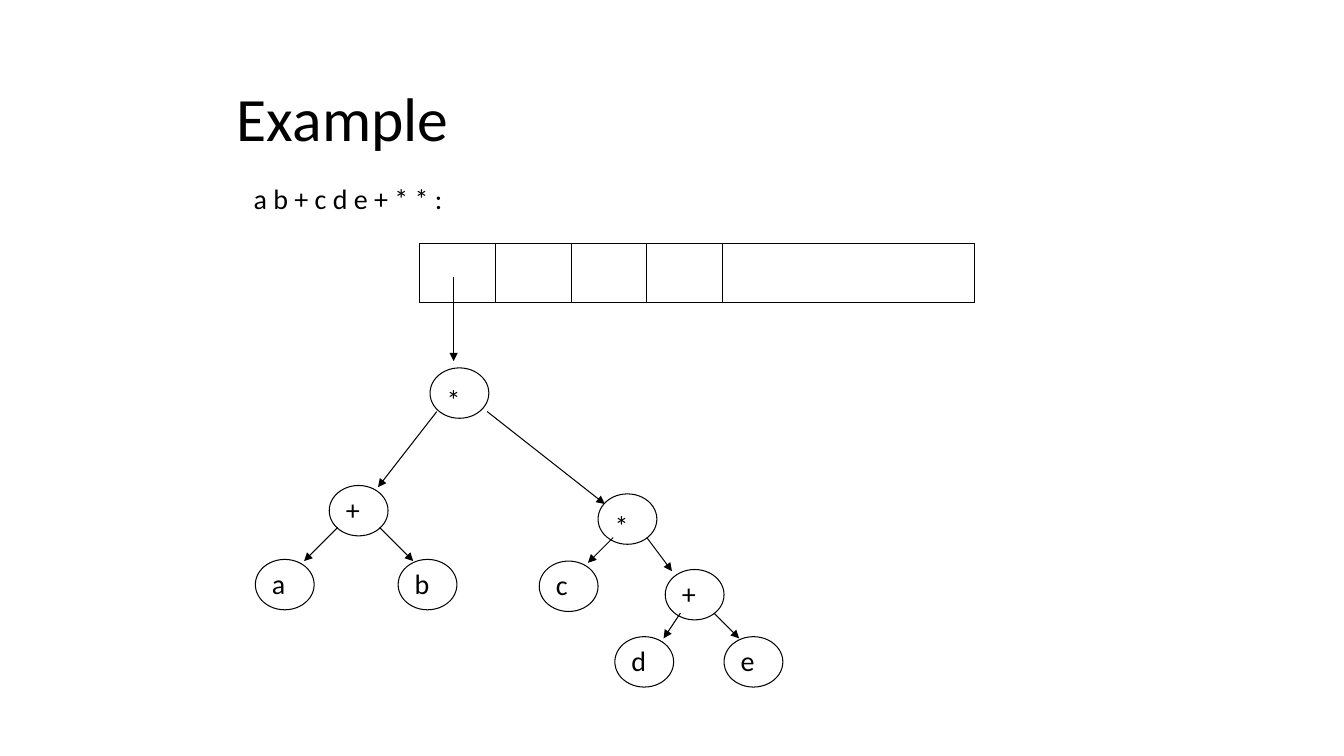
"""Build the slide showing the final expression tree of a postfix example."""
from lxml import etree
from pptx import Presentation
from pptx.dml.color import RGBColor
from pptx.enum import shapes, text
from pptx.oxml import ns
from pptx.util import Pt

COLORS = {"ink": "000000"}
INK = RGBColor.from_string(COLORS["ink"])
FONT = "Calibri"
NODE_WIDTH, NODE_HEIGHT = 42, 36
STACK_LEFT, STACK_TOP, STACK_WIDTH, STACK_HEIGHT = 300, 174, 396, 42
CELL_WIDTH, CELL_COUNT = 54, 4


def add_label(page, words, left, top, width, height):
    box = page.shapes.add_textbox(Pt(left), Pt(top), Pt(width), Pt(height))
    box.text_frame.word_wrap = False
    box.text_frame.auto_size = text.MSO_AUTO_SIZE.SHAPE_TO_FIT_TEXT
    span = box.text_frame.paragraphs[0].add_run()
    span.text = words
    span.font.name, span.font.size = FONT, Pt(20)
    span.font.color.rgb = INK


def add_line(page, start_x, start_y, end_x, end_y, arrow=False):
    line = page.shapes.add_connector(
        shapes.MSO_CONNECTOR.STRAIGHT, Pt(start_x), Pt(start_y), Pt(end_x), Pt(end_y))
    line.line.color.rgb, line.line.width = INK, Pt(0.75)
    if arrow:
        etree.SubElement(line.line._get_or_add_ln(), ns.qn("a:tailEnd"), type="triangle")
    etree.SubElement(line._element.spPr, ns.qn("a:effectLst"))


deck = Presentation()
deck.slide_width, deck.slide_height = Pt(960), Pt(540)
page = deck.slides.add_slide(deck.slide_layouts[5])

title = page.shapes.title
title.left, title.top, title.width, title.height = Pt(162), Pt(42), Pt(612), Pt(90)
title.text_frame.vertical_anchor = text.MSO_ANCHOR.MIDDLE
title.text_frame.auto_size = text.MSO_AUTO_SIZE.NONE
para = title.text_frame.paragraphs[0]
para.alignment, para.line_spacing = text.PP_ALIGN.LEFT, 0.9
span = para.add_run()
span.text = "Example"
span.font.name, span.font.size = FONT, Pt(44)
span.font.color.rgb = INK

add_label(page, "a b + c d e + * * :", 174, 126, 154, 31)

stack = (shapes.MSO_SHAPE.RECTANGLE, STACK_LEFT, STACK_TOP, STACK_WIDTH, STACK_HEIGHT)
nodes = [
    ("*", 307.2, 262.8),
    ("+", 235.2, 346.8),
    ("a", 182.4, 399.6),
    ("b", 284.4, 399.6),
    ("*", 427.2, 352.8),
    ("c", 385.2, 400.8),
    ("+", 475.2, 406.8),
    ("d", 439.2, 454.8),
    ("e", 517.2, 454.8),
]
ovals = [(shapes.MSO_SHAPE.OVAL, left, top, NODE_WIDTH, NODE_HEIGHT) for _, left, top in nodes]
for kind, left, top, width, height in [stack] + ovals:
    outline = page.shapes.add_shape(kind, Pt(left), Pt(top), Pt(width), Pt(height))
    outline.shadow.inherit = False
    outline.fill.background()
    outline.line.color.rgb, outline.line.width = INK, Pt(0.75)

for symbol, left, top in nodes:
    drop = 7.2 if symbol == "*" else 1.2
    add_label(page, symbol, left + 4.8, top + drop, 24.5, 31.5)

for number in range(1, CELL_COUNT + 1):
    divider = STACK_LEFT + number * CELL_WIDTH
    add_line(page, divider, STACK_TOP, divider, STACK_TOP + STACK_HEIGHT)

arrows = [
    (324, 198, 324, 258),
    (312, 294, 270, 348),
    (348, 294, 432, 360),
    (241.2, 376.8, 217.2, 400.8),
    (271.2, 376.8, 295.2, 400.8),
    (438, 384, 420, 402),
    (462, 384, 480, 408),
    (486, 438, 474, 456),
    (510, 438, 528, 456),
]
for arrow in arrows:
    add_line(page, *arrow, arrow=True)

deck.save("out.pptx")
